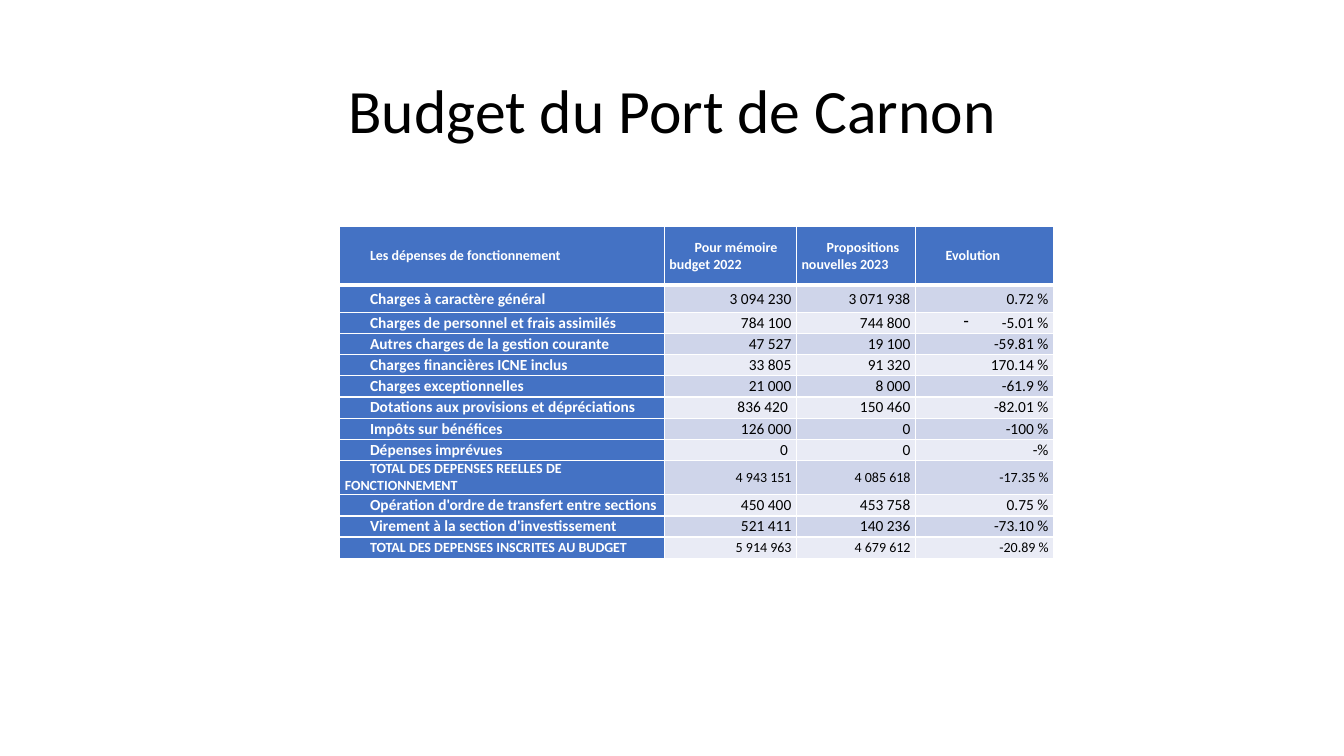
from dataclasses import dataclass

from lxml import etree
from pptx import Presentation
from pptx import util as u
from pptx.dml.color import RGBColor
from pptx.enum import text
from pptx.oxml.ns import qn

W, H = 13.33, 7.5


@dataclass(frozen=True)
class Theme:
    font: str = "Calibri"
    ink: str = "000000"
    paper: str = "FFFFFF"
    head: str = "4472C4"
    bands: tuple = ("CFD5EA", "E9EBF5")
    title_size: int = 44
    body_size: int = 11
    small_size: int = 10
    rule: int = 1
    head_rule: int = 3


T = Theme()
COLS = [3.22, 1.31, 1.18, 1.37]
HEAD_H, FIRST_H, ROW_H, WRAPPED_H = 0.58, 0.27, 0.21, 0.34
INDENT, BULLET_INDENT = 0.25, 0.38

HEADER = ["Les dépenses de fonctionnement ", "Pour mémoire budget 2022",
          "Propositions nouvelles 2023", "Evolution"]
EXPENSES = [
    ["Charges à caractère général", "3 094 230", "3 071 938", "0.72 %"],
    ["Charges de personnel et frais assimilés", "784 100", "744 800", "-5.01 %"],
    ["Autres charges de la gestion courante", "47 527", "19 100", "-59.81 %"],
    ["Charges financières ICNE inclus", "33 805", "91 320", "170.14 %"],
    ["Charges exceptionnelles", "21 000", "8 000", "-61.9 %"],
    ["Dotations aux provisions et dépréciations", "836 420 ", " 150 460", "-82.01 %"],
    ["Impôts sur bénéfices", "126 000", "0", "-100 %"],
    ["Dépenses imprévues", "0 ", "0", "-%"],
    ["TOTAL DES DEPENSES REELLES DE FONCTIONNEMENT",
     "4 943 151", "4 085 618", "-17.35 %"],
    ["Opération d'ordre de transfert entre sections", "450 400", "453 758", "0.75 %"],
    ["Virement à la section d'investissement", "521 411", "140 236", "-73.10 %"],
    ["TOTAL DES DEPENSES INSCRITES AU BUDGET", "5 914 963", "4 679 612", "-20.89 %"],
]
BULLETED = "-5.01 %"


def set_all(obj, values):
    for name, value in values.items():
        setattr(obj, name, value)


def write(p, content, size, color, bold=False):
    r = p.add_run()
    r.text = content
    set_all(r.font, {"name": T.font, "size": u.Pt(size), "bold": bold})
    r.font.color.rgb = RGBColor.from_string(color)


def indent(p, left, first, bullet=None):
    """Set left margin and first-line indent in inches, with an optional bullet."""
    pPr = p._p.get_or_add_pPr()
    pPr.set("marL", str(u.Inches(left)))
    pPr.set("indent", str(u.Inches(first)))
    if bullet:
        etree.SubElement(pPr, qn("a:buChar"), char=bullet)
    else:
        etree.SubElement(pPr, qn("a:buNone"))


def border(cell, widths):
    """Draw the four cell edges; widths in points, in the order L, R, T, B."""
    tcPr = cell._tc.get_or_add_tcPr()
    for i, (side, width) in enumerate(zip("LRTB", widths)):
        ln = etree.Element(qn(f"a:ln{side}"), w=str(u.Pt(width)))
        fill = etree.SubElement(ln, qn("a:solidFill"))
        etree.SubElement(fill, qn("a:srgbClr"), val=T.paper)
        tcPr.insert(i, ln)


def fill_cell(cell, content, row, col):
    is_head, is_label = row == 0, row == 0 or col == 0
    is_small = is_head or EXPENSES[row - 1][0].startswith("TOTAL")
    set_all(cell, {"margin_left": u.Inches(0.05), "margin_right": u.Inches(0.05),
                   "margin_top": 0, "margin_bottom": 0,
                   "vertical_anchor": text.MSO_ANCHOR.MIDDLE})
    cell.fill.solid()
    cell.fill.fore_color.rgb = RGBColor.from_string(
        T.head if is_label else T.bands[(row - 1) % 2])
    border(cell, [T.rule, T.rule, T.head_rule if row == 1 else T.rule,
                  T.head_rule if is_head else T.rule])

    p = cell.text_frame.paragraphs[0]
    p.alignment = text.PP_ALIGN.LEFT if is_label else text.PP_ALIGN.RIGHT
    if content == BULLETED:
        indent(p, BULLET_INDENT, -BULLET_INDENT, "-")
    else:
        indent(p, 0, INDENT)
    write(p, content, T.small_size if is_small else T.body_size,
          T.paper if is_label else T.ink, is_label)


def row_height(row):
    if row == 0:
        return HEAD_H
    if row == 1:
        return FIRST_H
    return WRAPPED_H if "REELLES" in EXPENSES[row - 1][0] else ROW_H


def add_title(s, content):
    sp = s.shapes.add_textbox(*(u.Inches(v) for v in (0.92, 0.4, 11.5, 1.45)))
    tf = sp.text_frame
    set_all(tf, {"word_wrap": True, "vertical_anchor": text.MSO_ANCHOR.MIDDLE})
    p = tf.paragraphs[0]
    set_all(p, {"alignment": text.PP_ALIGN.CENTER, "line_spacing": 0.9})
    write(p, content, T.title_size, T.ink)


def add_budget_table(s, left, top):
    rows = [HEADER] + EXPENSES
    heights = [row_height(i) for i in range(len(rows))]
    box = (left, top, sum(COLS), sum(heights))
    tbl = s.shapes.add_table(len(rows), len(COLS), *(u.Inches(v) for v in box)).table
    set_all(tbl, {"first_row": True, "first_col": True, "horz_banding": True})
    for column, width in zip(tbl.columns, COLS):
        column.width = u.Inches(width)
    for i, (values, height) in enumerate(zip(rows, heights)):
        tbl.rows[i].height = u.Inches(height)
        for j, value in enumerate(values):
            fill_cell(tbl.cell(i, j), value, i, j)


def main():
    prs = Presentation()
    set_all(prs, {"slide_width": u.Inches(W), "slide_height": u.Inches(H)})
    s = prs.slides.add_slide(prs.slide_layouts[6])
    add_title(s, "Budget du Port de Carnon")
    add_budget_table(s, 3.37, 0.3 * H)
    prs.save("out.pptx")


if __name__ == "__main__":
    main()
